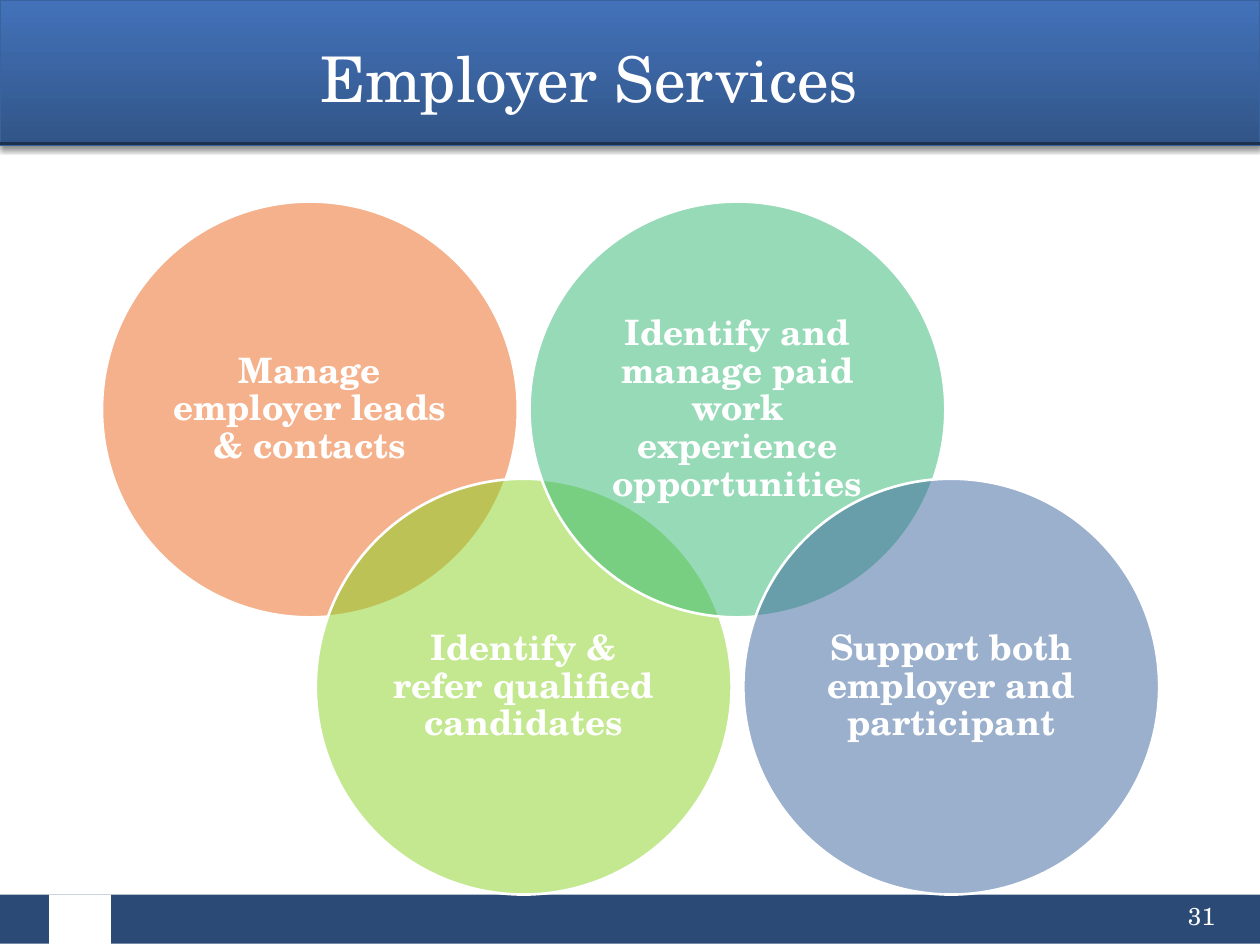
import pptx
import pptx.util
import pptx.dml.color
import pptx.enum.shapes
import pptx.enum.text
import pptx.oxml
import pptx.oxml.ns
from lxml import etree

Inches = pptx.util.Inches
Pt = pptx.util.Pt
Kind = pptx.enum.shapes.MSO_SHAPE
Align = pptx.enum.text.PP_ALIGN
Anchor = pptx.enum.text.MSO_ANCHOR
qn = pptx.oxml.ns.qn

FONT = "TeX Gyre Schola"
WHITE = "FFFFFF"
NAVY = "2B4A76"
CIRCLES = [
    ("Manage employer leads & contacts", "EB641B"),
    ("Identify & refer qualified candidates", "88D323"),
    ("Identify and manage paid work experience opportunities", "2FB773"),
    ("Support both employer and participant", "39639D"),
]
SHADOW = (
    '<a:effectLst xmlns:a="http://schemas.openxmlformats.org/drawingml/2006/main">'
    '<a:outerShdw blurRad="38100" dist="25400" dir="5400000" rotWithShape="0">'
    '<a:srgbClr val="000000"><a:alpha val="45000"/></a:srgbClr>'
    '</a:outerShdw></a:effectLst>'
)


def color(code):
    """Turn a hex string into a colour."""
    return pptx.dml.color.RGBColor.from_string(code)


def write(shape, text, size, bold=False, align=Align.LEFT, anchor=Anchor.TOP,
          space=1.0, inset=None):
    """Write one formatted paragraph into a shape."""
    frame = shape.text_frame
    frame.word_wrap = True
    frame.vertical_anchor = anchor
    if inset is not None:
        frame.margin_left = frame.margin_right = Inches(inset)
        frame.margin_top = frame.margin_bottom = Inches(inset)
    line = frame.paragraphs[0]
    line.text = text
    line.alignment = align
    line.line_spacing = space
    font = line.runs[0].font
    font.name, font.size, font.bold = FONT, Pt(size), bold
    font.color.rgb = color(WHITE)


def block(shapes, kind, box, fill, edge=None, width=1):
    """Add a filled shape with an optional outline."""
    shape = shapes.add_shape(kind, *map(Inches, box))
    shape.shadow.inherit = False
    shape.fill.solid()
    shape.fill.fore_color.rgb = color(fill)
    if edge:
        shape.line.color.rgb = color(edge)
        shape.line.width = Pt(width)
    else:
        shape.line.fill.background()
    return shape


def header(shapes, box, title):
    """Draw the gradient band, its lower rules and the title."""
    left, top, width, height = box
    band = block(shapes, Kind.RECTANGLE, box, NAVY, "39639D")
    band.fill.gradient()
    band.fill.gradient_angle = 270
    for stop, code, place in zip(band.fill.gradient_stops, ("4372BA", "315587"), (0, 1)):
        stop.color.rgb = color(code)
        stop.position = place
    props = band.element.spPr
    props.replace(props.find(qn("a:effectLst")), pptx.oxml.parse_xml(SHADOW))
    level = Inches(top + height - 0.01)
    for code, weight in (("000000", 1), ("1C314E", 2)):
        rule = shapes.add_connector(pptx.enum.shapes.MSO_CONNECTOR.STRAIGHT,
                                    Inches(left), level, Inches(left + width), level)
        rule.line.color.rgb = color(code)
        rule.line.width = Pt(weight)
        etree.SubElement(rule.element.spPr, qn("a:effectLst"))
    label = shapes.add_textbox(Inches(left + 0.78), Inches(top + 0.04),
                               Inches(7.79), Inches(height))
    write(label, title, 36, align=Align.CENTER, anchor=Anchor.MIDDLE)


def rings(shapes, box):
    """Place overlapping circles in a zigzag that fills the box."""
    left, top, width, height = box
    size = 3.3
    step = (width - size) / (len(CIRCLES) - 1)
    group = shapes.add_group_shape()
    for i, (text, fill) in enumerate(CIRCLES):
        drop = (height - size) * (i % 2)
        place = (left + i * step, top + drop, size, size)
        ring = block(group.shapes, Kind.OVAL, place, fill, WHITE, 1.5)
        tint = ring.element.spPr.find(qn("a:solidFill"))[0]
        etree.SubElement(tint, qn("a:alpha")).set("val", "50000")
        write(ring, text, 20, bold=True, align=Align.CENTER,
              anchor=Anchor.MIDDLE, space=0.9, inset=0.08)


def footer(shapes, box):
    """Draw the bottom bar with its white gap."""
    left, top, width, height = box
    block(shapes, Kind.RECTANGLE, box, NAVY)
    block(shapes, Kind.RECTANGLE, (left + 0.39, top, 0.49, height + 0.01), WHITE)


def number(shapes, box, text):
    """Write the slide number."""
    write(shapes.add_textbox(*map(Inches, box)), text, 14)


def main():
    """Build and save the slide."""
    deck = pptx.Presentation()
    deck.slide_width, deck.slide_height = Inches(10), Inches(7.5)
    shapes = deck.slides.add_slide(deck.slide_layouts[6]).shapes
    footer(shapes, (0, 7.1, 10, 0.39))
    header(shapes, (0, 0, 10, 1.15), "Employer Services")
    rings(shapes, (0.81, 1.6, 8.39, 5.5))
    number(shapes, (9.33, 7.1, 0.67, 0.4), "31")
    deck.save("out.pptx")


if __name__ == "__main__":
    main()
